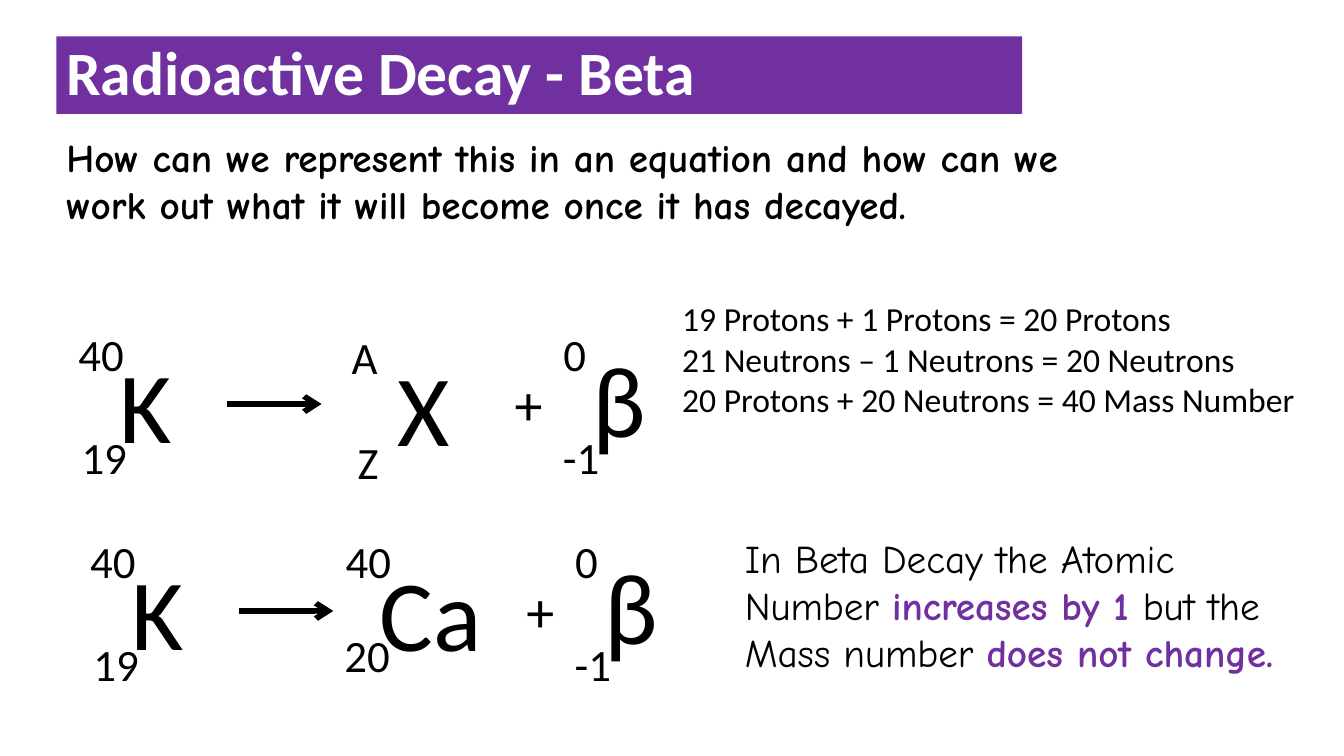
from dataclasses import dataclass

from lxml import etree
from pptx import Presentation
from pptx import util as u
from pptx.dml.color import RGBColor
from pptx.enum import shapes, text
from pptx.oxml.ns import qn

COLOURS = {"purple": "7030A0", "white": "FFFFFF", "black": "000000"}
BODY_FONT = "Calibri"
HAND_FONT = "Comic Neue"


@dataclass(frozen=True)
class Run:
    words: str
    size: float
    font: str = BODY_FONT
    colour: str = "black"
    bold: bool = False


@dataclass(frozen=True)
class Box:
    left: float
    top: float
    width: float
    height: float


@dataclass(frozen=True)
class Label:
    words: str
    left: float
    top: float
    width: float
    size: float = 32
    wrap: bool = False


@dataclass(frozen=True)
class Panel:
    box: Box
    runs: tuple[Run, ...]
    fill: str = "white"
    outlined: bool = True
    anchor: text.MSO_ANCHOR = text.MSO_ANCHOR.TOP
    line_spacing: float = 1.0


@dataclass(frozen=True)
class Equation:
    shift_x: float
    shift_y: float
    product: tuple[Label, ...]


PANELS = (
    Panel(
        Box(40.3, 26, 689.8, 55.4),
        (Run("Radioactive Decay - Beta", 44, colour="white", bold=True),),
        fill="purple", outlined=False, anchor=text.MSO_ANCHOR.MIDDLE, line_spacing=0.9,
    ),
    Panel(
        Box(40.3, 91.4, 744.5, 108.7),
        (Run("How can we represent this in an equation and how can we work out "
             "what it will become once it has decayed.", 28, HAND_FONT, bold=True),),
    ),
    Panel(
        Box(524.9, 378, 411.8, 143.3),
        (
            Run("In Beta Decay the Atomic Number ", 28, HAND_FONT),
            Run("increases by 1 ", 28, HAND_FONT, "purple", True),
            Run("but the Mass number ", 28, HAND_FONT),
            Run("does not change.", 28, HAND_FONT, "purple", True),
        ),
    ),
)

SHARED_LABELS = (
    Label("K", 78.5, 241, 94.3, 72, True),
    Label("40", 49, 229.9, 47.5),
    Label("19", 51.2, 303.3, 47.5),
    Label("+", 360.5, 260.5, 34.6, 40),
    Label("β", 416, 236.8, 108, 72, True),
    Label("0", 395.3, 229.9, 31),
    Label("-1", 395, 303.3, 41),
)

EQUATIONS = (
    Equation(0, 0, (
        Label("X", 276.5, 243.4, 94.3, 72, True),
        Label("A", 244.1, 231.8, 33.1),
        Label("Z", 248.4, 306.7, 29.5),
    )),
    Equation(8.4, 147.8, (
        Label("Ca", 255.9, 241.7, 94.3, 72, True),
        Label("40", 231.4, 230.2, 47.5),
        Label("20", 230.6, 297.2, 47.5),
    )),
)

NUCLEON_COUNTS = (
    "19 Protons + 1 Protons = 20 Protons",
    "21 Neutrons – 1 Neutrons = 20 Neutrons",
    "20 Protons + 20 Neutrons = 40 Mass Number",
)


def colour(name: str) -> RGBColor:
    return RGBColor.from_string(COLOURS[name])


def add_runs(paragraph, runs: tuple[Run, ...]) -> None:
    paragraph.alignment = text.PP_ALIGN.LEFT
    for item in runs:
        run = paragraph.add_run()
        run.text = item.words
        run.font.size = u.Pt(item.size)
        run.font.name = item.font
        run.font.bold = item.bold
        run.font.color.rgb = colour(item.colour)


def lengths(box: Box) -> tuple[u.Pt, ...]:
    return tuple(u.Pt(value) for value in (box.left, box.top, box.width, box.height))


def draw_panel(slide, panel: Panel) -> None:
    shape = slide.shapes.add_shape(shapes.MSO_SHAPE.RECTANGLE, *lengths(panel.box))
    shape.shadow.inherit = False
    shape.fill.solid()
    shape.fill.fore_color.rgb = colour(panel.fill)
    if panel.outlined:
        shape.line.color.rgb = colour(panel.fill)
        shape.line.width = u.Pt(4.5)
    else:
        shape.line.fill.background()
    frame = shape.text_frame
    frame.word_wrap = True
    frame.vertical_anchor = panel.anchor
    paragraph = frame.paragraphs[0]
    paragraph.line_spacing = panel.line_spacing
    add_runs(paragraph, panel.runs)


def draw_text(slide, box: Box, lines: tuple[str, ...], size: float, wrap: bool) -> None:
    frame = slide.shapes.add_textbox(*lengths(box)).text_frame
    frame.word_wrap = wrap
    frame.auto_size = text.MSO_AUTO_SIZE.SHAPE_TO_FIT_TEXT
    for index, line in enumerate(lines):
        paragraph = frame.add_paragraph() if index else frame.paragraphs[0]
        add_runs(paragraph, (Run(line, size),))


def draw_arrow(slide, left: float, right: float, height: float) -> None:
    connector = slide.shapes.add_connector(
        shapes.MSO_CONNECTOR.STRAIGHT, u.Pt(left), u.Pt(height), u.Pt(right), u.Pt(height)
    )
    connector.line.color.rgb = colour("black")
    connector.line.width = u.Pt(4)
    properties = connector.element.spPr
    etree.SubElement(properties.find(qn("a:ln")), qn("a:tailEnd"), type="arrow")
    etree.SubElement(properties, qn("a:effectLst"))


def draw_equation(slide, equation: Equation) -> None:
    for label in SHARED_LABELS + equation.product:
        box = Box(label.left + equation.shift_x, label.top + equation.shift_y,
                  label.width, label.size * 1.22 + 7.2)
        draw_text(slide, box, (label.words,), label.size, label.wrap)
    draw_arrow(slide, 162 + equation.shift_x, 229.7 + equation.shift_x,
               288.6 + equation.shift_y)


def main() -> None:
    presentation = Presentation()
    presentation.slide_width = u.Pt(960)
    presentation.slide_height = u.Pt(540)
    slide = presentation.slides.add_slide(presentation.slide_layouts[6])
    for panel in PANELS:
        draw_panel(slide, panel)
    for equation in EQUATIONS:
        draw_equation(slide, equation)
    draw_text(slide, Box(480.2, 209.5, 468, 94.3), NUCLEON_COUNTS, 24, False)
    presentation.save("out.pptx")


if __name__ == "__main__":
    main()
